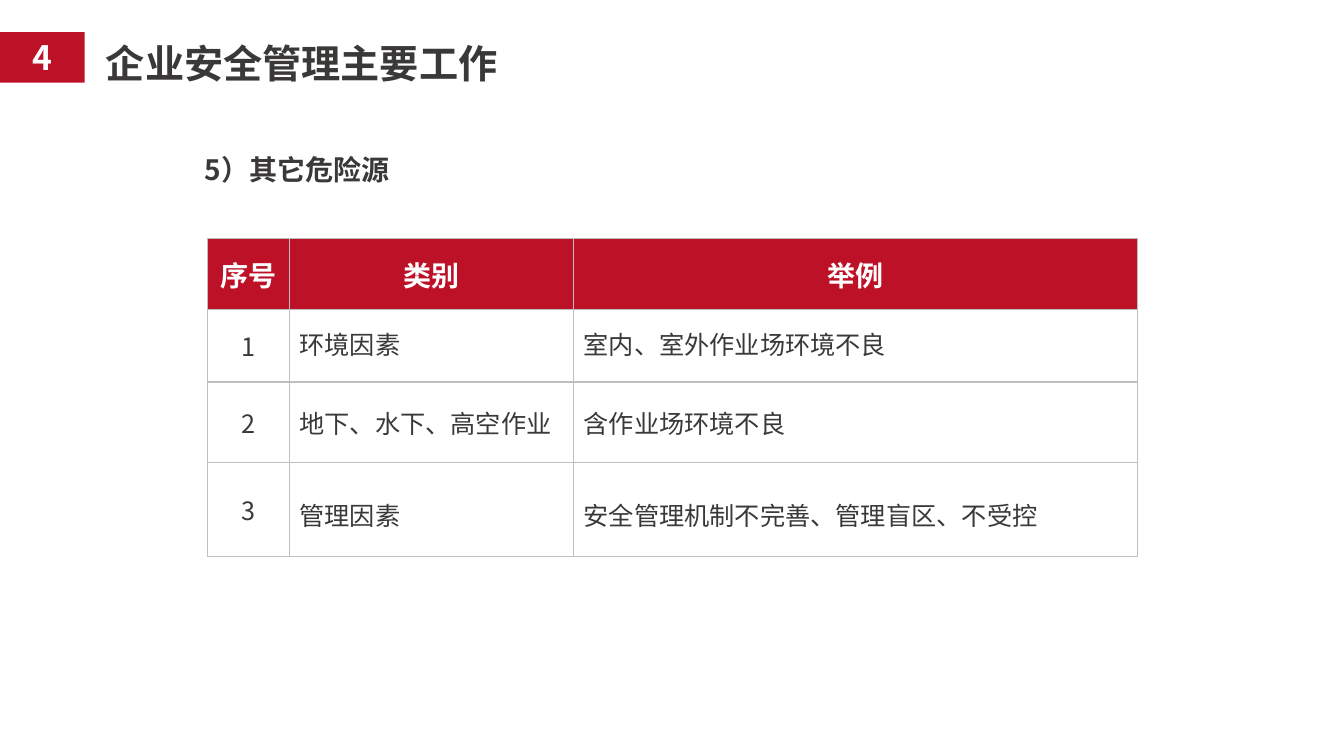
"""Build the slide on other hazard sources in enterprise safety management."""
import pptx
import pptx.util
import pptx.dml.color
import pptx.enum.shapes
import pptx.enum.text
import pptx.oxml
import pptx.oxml.ns
from lxml import etree

Inches, Pt = pptx.util.Inches, pptx.util.Pt
PP_ALIGN, MSO_ANCHOR = pptx.enum.text.PP_ALIGN, pptx.enum.text.MSO_ANCHOR
qn = pptx.oxml.ns.qn
FONT = "Noto Sans CJK SC"
RED, DARK, WHITE, GREY = "BD1127", "3B3838", "FFFFFF", "BFBFBF"


def rgb(value):
    return pptx.dml.color.RGBColor.from_string(value)


def write(tf, text, size, color, bold=False, align=PP_ALIGN.LEFT):
    tf.text = text
    p = tf.paragraphs[0]
    p.alignment = align
    p.font.name = FONT
    p.font.size = Pt(size)
    p.font.bold = bold
    p.font.color.rgb = rgb(color)
    latin = p.font._element.find(qn("a:latin"))
    ea = etree.Element(qn("a:ea"), typeface=FONT)
    latin.addnext(ea)
    return p


prs = pptx.Presentation()
prs.slide_width, prs.slide_height = Inches(13.33), Inches(7.5)
s = prs.slides.add_slide(prs.slide_layouts[5])

title = s.shapes.title
title.left, title.top = Inches(0.95), Inches(0.34)
title.width, title.height = Inches(4.71), Inches(0.57)
tf = title.text_frame
tf.auto_size = pptx.enum.text.MSO_AUTO_SIZE.NONE
tf.vertical_anchor = MSO_ANCHOR.MIDDLE
write(tf, "企业安全管理主要工作", 28, DARK, True)

badge = s.shapes.add_shape(pptx.enum.shapes.MSO_SHAPE.RECTANGLE,
                           Inches(0), Inches(0.32), Inches(0.84), Inches(0.5))
badge.shadow.inherit = False
badge.fill.solid()
badge.fill.fore_color.rgb = rgb(RED)
badge.line.fill.background()
badge.text_frame.vertical_anchor = MSO_ANCHOR.MIDDLE
write(badge.text_frame, "4", 24, WHITE, True, PP_ALIGN.CENTER)

heading = s.shapes.add_textbox(Inches(1.93), Inches(1.41), Inches(3.39), Inches(0.54))
tf = heading.text_frame
tf.word_wrap = True
tf.vertical_anchor = MSO_ANCHOR.MIDDLE
write(tf, "5）其它危险源", 20, DARK, True)

rows = [
    ("序号", "类别", "举例"),
    ("1", "环境因素", "室内、室外作业场环境不良"),
    ("2", "地下、水下、高空作业", "含作业场环境不良"),
    ("3", "管理因素", "安全管理机制不完善、管理盲区、不受控"),
]
widths = [0.81, 2.82, 5.59]
heights = [0.7, 0.72, 0.8, 0.93]
line_spacings = [None, 0.8, None, 1.3]

table = s.shapes.add_table(len(rows), len(widths), Inches(2.06), Inches(2.37),
                           Inches(sum(widths)), Inches(sum(heights))).table
table.first_row = table.horz_banding = False
for column, width in zip(table.columns, widths):
    column.width = Inches(width)

for i, texts in enumerate(rows):
    table.rows[i].height = Inches(heights[i])
    header = i == 0
    for j, text in enumerate(texts):
        cell = table.cell(i, j)
        cell.vertical_anchor = MSO_ANCHOR.MIDDLE
        size = 20 if header else 18
        centred = header or j == 0
        p = write(cell.text_frame, text, size, WHITE if header else DARK, header,
                  PP_ALIGN.CENTER if centred else PP_ALIGN.LEFT)
        if centred or i < 3:
            p.space_before = Pt(size * 0.2)
        if not centred and line_spacings[i]:
            p.line_spacing = line_spacings[i]
        tcPr = cell._tc.get_or_add_tcPr()
        for side in ("a:lnL", "a:lnR", "a:lnT", "a:lnB"):
            ln = etree.SubElement(tcPr, qn(side), w=str(Pt(1)))
            solid = etree.SubElement(ln, qn("a:solidFill"))
            etree.SubElement(solid, qn("a:srgbClr"), val=GREY)
        if header:
            cell.fill.solid()
            cell.fill.fore_color.rgb = rgb(RED)
        else:
            cell.fill.background()

prs.save("out.pptx")
